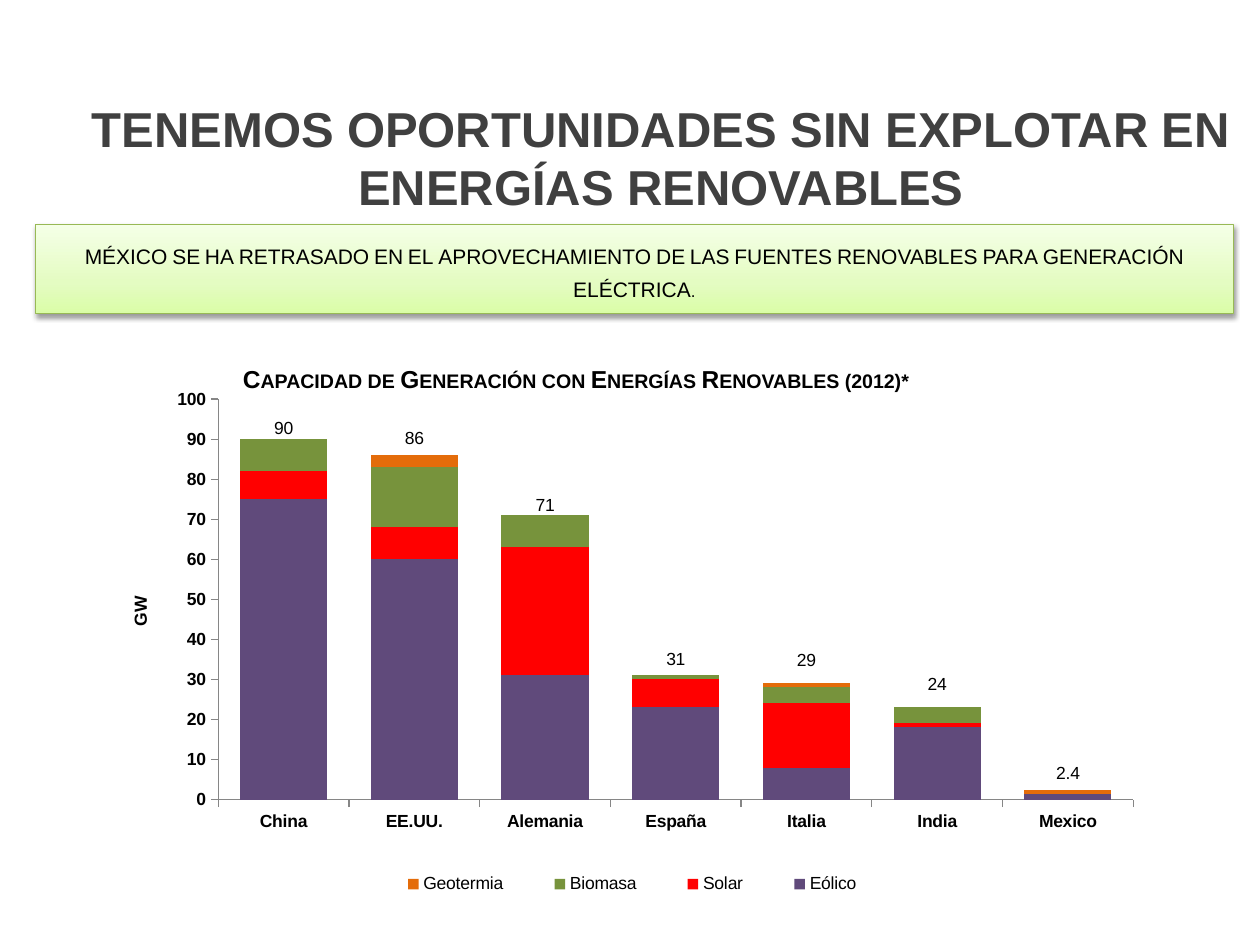
"""Build a slide on renewable generating capacity by country."""
from dataclasses import dataclass
from typing import Any

from lxml import etree
from pptx import Presentation
from pptx import util as u
from pptx.chart import data as chart_data
from pptx.dml import color
from pptx.enum import chart as charts, shapes, text
from pptx.oxml import ns

COLORS = {
    "title": "404040", "text": "000000", "paper": "FFFFFF", "axis": "868686",
    "border": "98B955", "wind": "604A7B", "solar": "FF0000",
    "biomass": "77933C", "geothermal": "E46C0A",
}
GRADIENT = ((0, "DAFDA7"), (35, "E4FCC2"), (100, "F5FFE7"))
COUNTRIES = ("China", "EE.UU.", "Alemania", "España", "Italia", "India", "Mexico")
TOTAL_LABELS = ("90", "86", "71", "31", "29", "24", "2.4")
LABEL_RISES = (0.04, 0.05, 0.04, 0.05, 0.06, 0.06, 0.05)
AXIS_MAX = 100
PLOT = {"x": 0.149, "y": 0.169, "w": 0.831, "h": 0.641}


@dataclass(frozen=True)
class Source:
    name: str
    values: tuple[float, ...]
    fill: str


@dataclass(frozen=True)
class Panel:
    kind: Any
    frame: tuple[float, float, float, float]
    words: str
    paragraph: dict[str, Any]
    font: dict[str, Any]
    anchor: Any


SOURCES = (
    Source("Eólico", (75, 60, 31, 23, 8, 18, 1.4), "wind"),
    Source("Solar", (7, 8, 32, 7, 16, 1, 0), "solar"),
    Source("Biomasa", (8, 15, 8, 1, 4, 4, 0), "biomass"),
    Source("Geotermia", (0, 3, 0, 0, 1, 0, 1), "geothermal"),
)
CENTER = text.PP_ALIGN.CENTER
PANELS = (
    Panel(shapes.MSO_SHAPE.ROUNDED_RECTANGLE, (0.28, 1.78, 9.51, 0.71),
          "MÉXICO SE HA RETRASADO EN EL APROVECHAMIENTO DE LAS FUENTES RENOVABLES "
          "PARA GENERACIÓN ELÉCTRICA.",
          {"alignment": CENTER, "line_spacing": 1.3},
          {"size": u.Pt(12)}, text.MSO_ANCHOR.MIDDLE),
    Panel(shapes.MSO_SHAPE.RECTANGLE, (1.83, 2.84, 6.46, 0.34),
          "Capacidad de Generación con Energías Renovables (2012)*",
          {"alignment": text.PP_ALIGN.LEFT},
          {"size": u.Pt(14), "bold": True}, text.MSO_ANCHOR.TOP),
)


def rgb(name: str) -> color.RGBColor:
    return color.RGBColor.from_string(COLORS[name])


def apply(target: Any, values: dict[str, Any]) -> None:
    for name, value in values.items():
        setattr(target, name, value)


def style_font(font: Any, ink: str = "text", **values: Any) -> None:
    apply(font, {"name": "Arial", **values})
    font.color.rgb = rgb(ink)


def inches(frame: tuple[float, ...]) -> list[u.Inches]:
    return [u.Inches(value) for value in frame]


def set_layout(parent: Any, index: int, **values: Any) -> None:
    for old in parent.findall(ns.qn("c:layout")):
        parent.remove(old)
    layout = etree.Element(ns.qn("c:layout"))
    manual = etree.SubElement(layout, ns.qn("c:manualLayout"))
    for name, value in values.items():
        etree.SubElement(manual, ns.qn(f"c:{name}")).set("val", str(value))
    parent.insert(index, layout)


def add_title(page: Any) -> None:
    title = page.shapes.title
    left, top, width, height = inches((0.49, 0.71, 9.51, 1.07))
    apply(title, {"left": left, "top": top, "width": width, "height": height})
    frame = title.text_frame
    apply(frame, {"text": "TENEMOS OPORTUNIDADES SIN EXPLOTAR EN ENERGÍAS RENOVABLES",
                  "vertical_anchor": text.MSO_ANCHOR.MIDDLE, "word_wrap": True,
                  "auto_size": text.MSO_AUTO_SIZE.NONE})
    para = frame.paragraphs[0]
    para.alignment = CENTER
    style_font(para.runs[0].font, "title", size=u.Pt(28), bold=True)


def add_panel(page: Any, panel: Panel) -> Any:
    box = page.shapes.add_shape(panel.kind, *inches(panel.frame))
    box.shadow.inherit = False
    box.fill.solid()
    box.fill.fore_color.rgb = rgb("paper")
    box.line.fill.background()
    apply(box.text_frame, {"word_wrap": True, "vertical_anchor": panel.anchor})
    para = box.text_frame.paragraphs[0]
    apply(para, panel.paragraph)
    span = para.add_run()
    span.text = panel.words
    style_font(span.font, **panel.font)
    span.font._element.set("cap", "small")
    return box


def decorate_banner(box: Any) -> None:
    box.adjustments[0] = 0
    box.line.color.rgb = rgb("border")
    box.line.width = u.Pt(0.75)
    box.fill.gradient()
    box.fill.gradient_angle = 90
    properties = box._element.spPr
    stops = properties.find(f".//{ns.qn('a:gsLst')}")
    for old in list(stops):
        stops.remove(old)
    for position, tint in GRADIENT:
        stop = etree.SubElement(stops, ns.qn("a:gs"), pos=str(position * 1000))
        etree.SubElement(stop, ns.qn("a:srgbClr"), val=tint)
    effects = properties.find(ns.qn("a:effectLst"))
    shadow = etree.SubElement(
        effects, ns.qn("a:outerShdw"), blurRad=str(u.Pt(3.1)), dist=str(u.Pt(1.6)),
        dir="5400000", rotWithShape="0")
    black = etree.SubElement(shadow, ns.qn("a:srgbClr"), val=COLORS["text"])
    etree.SubElement(black, ns.qn("a:alpha"), val="38000")


def style_axis(axis: Any) -> None:
    apply(axis, {"has_major_gridlines": False,
                 "major_tick_mark": charts.XL_TICK_MARK.OUTSIDE,
                 "minor_tick_mark": charts.XL_TICK_MARK.NONE})
    axis.format.line.color.rgb = rgb("axis")
    style_font(axis.tick_labels.font, size=u.Pt(10), bold=True)


def add_total_labels(series: Any) -> None:
    totals = [sum(values) for values in zip(*(source.values for source in SOURCES))]
    for index, (words, total, rise) in enumerate(zip(TOTAL_LABELS, totals, LABEL_RISES)):
        label = series.points[index].data_label
        span = label.text_frame.paragraphs[0].add_run()
        span.text = words
        style_font(span.font, size=u.Pt(10), bold=False)
        label.position = charts.XL_LABEL_POSITION.INSIDE_END
        stacked = (total - SOURCES[0].values[index]) / AXIS_MAX * PLOT["h"]
        element = series._element.findall(f".//{ns.qn('c:dLbl')}")[index]
        set_layout(element, 1, x=0, y=round(-stacked - rise, 3))
    for leader in series._element.iter(ns.qn("c:showLeaderLines")):
        leader.set("val", "0")


def add_capacity_chart(page: Any) -> None:
    content = chart_data.CategoryChartData()
    content.categories = COUNTRIES
    for source in SOURCES:
        content.add_series(source.name, source.values)
    chart = page.shapes.add_chart(charts.XL_CHART_TYPE.COLUMN_STACKED,
                                  *inches((0.43, 2.33, 8.74, 4.96)), content).chart
    apply(chart, {"has_title": False, "has_legend": True})
    style_font(chart.font, name="Lato", size=u.Pt(10))
    plot = chart.plots[0]
    apply(plot, {"gap_width": 50, "overlap": 100, "vary_by_categories": False})
    for series, source in zip(plot.series, SOURCES):
        series.format.fill.solid()
        series.format.fill.fore_color.rgb = rgb(source.fill)
    add_total_labels(plot.series[0])

    style_axis(chart.category_axis)
    axis = chart.value_axis
    style_axis(axis)
    apply(axis, {"minimum_scale": 0, "maximum_scale": AXIS_MAX, "major_unit": 10})
    heading = axis.axis_title
    span = heading.text_frame.paragraphs[0].add_run()
    span.text = "GW"
    style_font(span.font, size=u.Pt(10), bold=True)
    heading._element.find(f".//{ns.qn('a:bodyPr')}").set("rot", "-5400000")

    edges = {"xMode": "edge", "yMode": "edge"}
    set_layout(heading._element, 1, **edges, x=0.065, y=0.48)
    legend = chart.legend
    apply(legend, {"position": charts.XL_LEGEND_POSITION.RIGHT, "include_in_layout": False})
    style_font(legend.font, size=u.Pt(10), bold=False)
    set_layout(legend._element, 1, **edges, x=0.28, y=0.92, w=0.49, h=0.05)
    area = chart._chartSpace.find(f".//{ns.qn('c:plotArea')}")
    set_layout(area, 0, layoutTarget="inner", **edges, **PLOT)


def main() -> None:
    deck = Presentation()
    deck.slide_width, deck.slide_height = u.Inches(10), u.Inches(7.5)
    page = deck.slides.add_slide(deck.slide_layouts[5])
    add_title(page)
    add_capacity_chart(page)
    banner, _ = [add_panel(page, panel) for panel in PANELS]
    decorate_banner(banner)
    deck.save("out.pptx")


if __name__ == "__main__":
    main()
